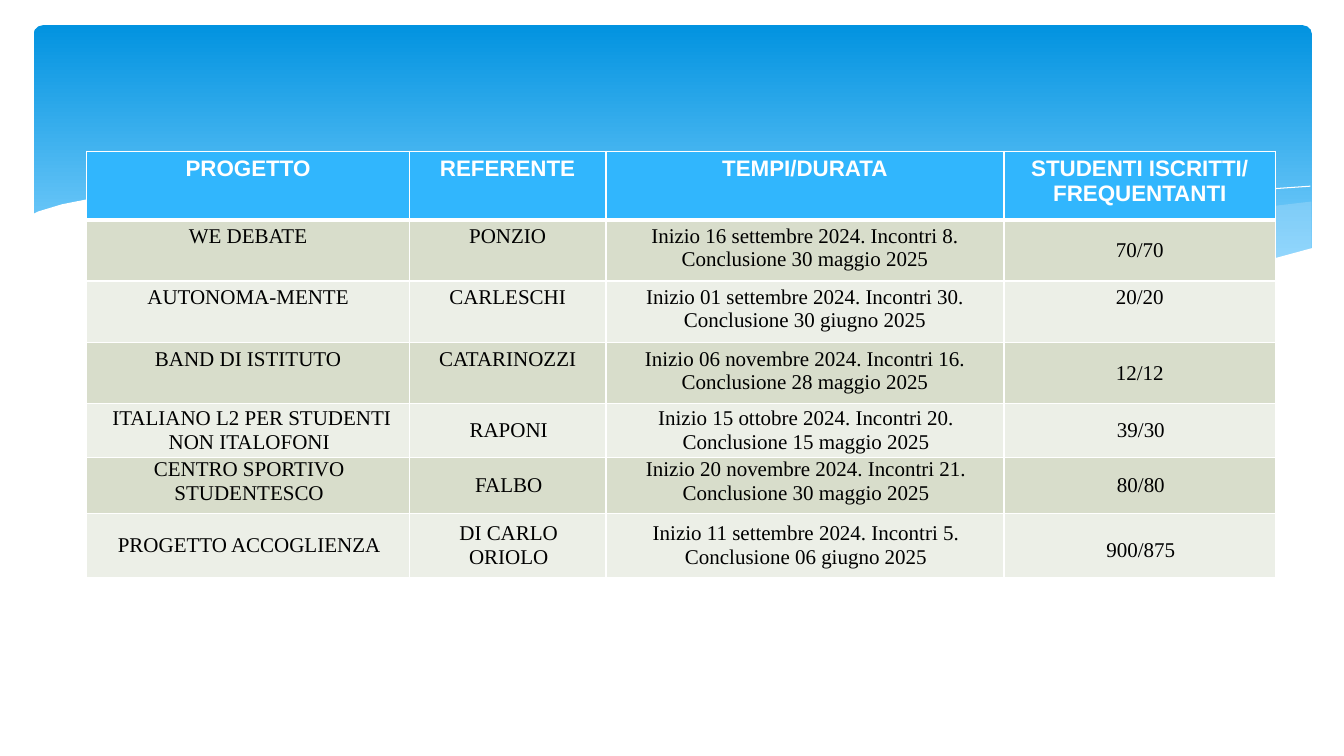
"""Build the slide that lists school projects, their leaders, dates and students."""
import pptx
import pptx.dml.color
import pptx.enum.shapes
import pptx.enum.text
import pptx.oxml
import pptx.oxml.ns
import pptx.util
from lxml import etree

Pt = pptx.util.Pt
RGBColor = pptx.dml.color.RGBColor
ANCHOR = pptx.enum.text.MSO_ANCHOR

WHITE = RGBColor(0xFF, 0xFF, 0xFF)
BLACK = RGBColor(0x00, 0x00, 0x00)
DEEP_BLUE = RGBColor(0x02, 0x93, 0xE0)
LIGHT_BLUE = RGBColor(0x83, 0xD3, 0xFE)
WAVE_BLUE = RGBColor(0xC6, 0xE7, 0xFC)
HEADER_BLUE = RGBColor(0x31, 0xB6, 0xFD)
BANDS = (RGBColor(0xD8, 0xDD, 0xCB), RGBColor(0xEC, 0xEF, 0xE7))

HEADER_FONT = {"name": "Arial", "size": Pt(16), "bold": True}
BODY_FONT = {"name": "Times New Roman", "size": Pt(15), "bold": False}

ROOMY = {"margin_left": Pt(7.2), "margin_right": Pt(7.2), "margin_top": Pt(3.6), "margin_bottom": Pt(3.6)}
TIGHT = {"margin_left": Pt(2.9), "margin_right": Pt(1.4), "margin_top": Pt(0.7), "margin_bottom": Pt(0.7)}
PLACEMENTS = {
    "t": {"vertical_anchor": ANCHOR.TOP},
    "m": {"vertical_anchor": ANCHOR.MIDDLE},
    "l": {"vertical_anchor": ANCHOR.TOP, "margin_top": Pt(18)},
}

RIGHT_WAVE = [
    (936.7, 144), (911, 147), (883.5, 151), (855.5, 155.5), (826, 160.5), (772.5, 170.5),
    (723.5, 178.5), (677.5, 185), (635, 191), (663, 193.5), (702.5, 197.5), (738, 199.5),
    (781, 200), (819.5, 198.5), (854, 196), (884, 191), (911.5, 185), (936.7, 178),
]
MIDDLE_WAVE = [
    (857, 196.5), (803.5, 191), (744.5, 183), (677.5, 173), (604, 160), (560, 152),
    (519, 146), (481.5, 141), (445.5, 137.5), (403, 134.5), (364.5, 133), (330.5, 134),
    (301, 135.5), (275, 137.5), (310.5, 141), (348, 146), (388, 152), (431.5, 160),
    (508.5, 173), (577.5, 183.5), (638.5, 191.5), (693.5, 197.5), (741.5, 199.5),
    (785, 200), (823, 199.5),
]
FALLING_LINE = [
    (296.5, 140.5), (322, 137.5), (359.5, 135.5), (415.5, 134.5), (469.5, 137), (534, 142),
    (610.5, 150), (698.5, 162.5), (763, 173.5), (834, 188), (871, 196),
]
RISING_LINE = [
    (589, 185), (626.5, 177), (692, 165), (745, 155.5), (803, 147), (859.5, 139.5),
    (900, 135.5), (936, 133),
]
WHITE_WAVE = [
    (938, 177), (903, 186.5), (873.5, 192), (840, 196.5), (803.5, 198.5), (762, 199),
    (714, 197.5), (661, 193), (600.5, 186), (533, 176.5), (456.5, 163.5), (402, 153.5),
    (350, 145.5), (303, 139.5), (260, 135.5), (220.5, 133), (169, 132.5), (126.5, 134),
    (91.5, 137.5), (64, 142), (44, 146), (27.5, 151), (22.5, 153.5), (22.5, 237), (938, 237),
]

COLUMN_WIDTHS = (230.4, 140.4, 284.4, 194)
PROJECTS = [
    (49, ROOMY, "tttt", ("PROGETTO", "REFERENTE", "TEMPI/DURATA", "STUDENTI ISCRITTI/\nFREQUENTANTI")),
    (43.7, ROOMY, "tttm", (
        "WE DEBATE", "PONZIO",
        "Inizio 16 settembre 2024. Incontri 8. Conclusione 30 maggio 2025", "70/70")),
    (44, ROOMY, "tttt", (
        "AUTONOMA-MENTE", "CARLESCHI",
        "Inizio 01 settembre 2024. Incontri 30. Conclusione 30 giugno 2025", "20/20")),
    (43.7, ROOMY, "tttm", (
        "BAND DI ISTITUTO", "CATARINOZZI",
        "Inizio 06 novembre 2024. Incontri 16. Conclusione 28 maggio 2025", "12/12")),
    (38.3, TIGHT, "mmmm", (
        " ITALIANO L2 PER STUDENTI NON ITALOFONI", "RAPONI",
        "Inizio 15 ottobre 2024. Incontri 20.\nConclusione 15 maggio 2025", "39/30")),
    (40.3, TIGHT, "tmtm", (
        "CENTRO SPORTIVO STUDENTESCO", "FALBO",
        "Inizio 20 novembre 2024. Incontri 21. Conclusione 30 maggio 2025", "80/80")),
    (45.3, TIGHT, "mmml", (
        "PROGETTO ACCOGLIENZA", "DI CARLO\nORIOLO",
        "Inizio 11 settembre 2024. Incontri 5.\nConclusione 06 giugno 2025", "900/875")),
]


def apply_format(target, values):
    """Set every attribute in values on target."""
    for attribute, value in values.items():
        setattr(target, attribute, value)


class SlideBuilder:
    """Hold the current slide and the style of its elements."""

    def __init__(self, slide):
        """Keep the slide to draw on."""
        self.shapes = slide.shapes

    def banner(self, left, top, width, height):
        """Draw the rounded panel with a vertical gradient."""
        panel = self.shapes.add_shape(
            pptx.enum.shapes.MSO_SHAPE.ROUNDED_RECTANGLE, Pt(left), Pt(top), Pt(width), Pt(height))
        panel.adjustments[0] = 0.034
        panel.shadow.inherit = False
        panel.line.fill.background()
        panel.fill.gradient()
        panel.fill.gradient_angle = 270
        for stop, position, color in zip(panel.fill.gradient_stops, (0, 0.9), (DEEP_BLUE, LIGHT_BLUE)):
            stop.position = position
            stop.color.rgb = color

    def outline(self, points, closed):
        """Draw a plain outline through the points."""
        corners = [(Pt(x), Pt(y)) for x, y in points]
        builder = self.shapes.build_freeform(*corners[0])
        builder.add_line_segments(corners[1:], close=closed)
        curve = builder.convert_to_shape()
        curve.shadow.inherit = False
        return curve

    def wave(self, points, color, opacity=100):
        """Draw a filled wave."""
        area = self.outline(points, True)
        area.line.fill.background()
        area.fill.solid()
        area.fill.fore_color.rgb = color
        if opacity < 100:
            tint = area.fill._xPr.find(".//" + pptx.oxml.ns.qn("a:srgbClr"))
            etree.SubElement(tint, pptx.oxml.ns.qn("a:alpha"), val=str(opacity * 1000))

    def ripple(self, points):
        """Draw a white hairline."""
        hairline = self.outline(points, False)
        hairline.fill.background()
        hairline.line.color.rgb = WHITE
        hairline.line.width = Pt(0)

    def borders(self, cell, widths):
        """Give a cell white borders on its four sides."""
        properties = cell._tc.get_or_add_tcPr()
        for side, width in widths.items():
            properties.append(pptx.oxml.parse_xml(
                f'<a:ln{side} {pptx.oxml.ns.nsdecls("a")} w="{Pt(width)}">'
                f'<a:solidFill><a:srgbClr val="{WHITE}"/></a:solidFill></a:ln{side}>'))

    def cell(self, cell, text, layout, font, color, fill, widths):
        """Fill and format one table cell."""
        self.borders(cell, widths)
        cell.fill.solid()
        cell.fill.fore_color.rgb = fill
        apply_format(cell, layout)
        cell.text = text
        for paragraph in cell.text_frame.paragraphs:
            paragraph.alignment = pptx.enum.text.PP_ALIGN.CENTER
            for run in paragraph.runs:
                apply_format(run.font, font)
                run.font.color.rgb = color

    def table(self, left, top, column_widths, rows):
        """Draw the table with a header and banded rows."""
        height = sum(row[0] for row in rows)
        grid = self.shapes.add_table(
            len(rows), len(column_widths), Pt(left), Pt(top), Pt(sum(column_widths)), Pt(height)).table
        grid.horz_banding = False
        for column, width in zip(grid.columns, column_widths):
            column.width = Pt(width)
        for index, (row_height, margins, placements, texts) in enumerate(rows):
            grid.rows[index].height = Pt(row_height)
            font, color, fill = (
                (BODY_FONT, BLACK, BANDS[(index - 1) % 2]) if index else (HEADER_FONT, WHITE, HEADER_BLUE))
            widths = {"L": 1, "R": 1, "T": 3 if index == 1 else 1, "B": 1 if index else 3}
            for column, (text, placement) in enumerate(zip(texts, placements)):
                layout = {**margins, **PLACEMENTS[placement]}
                self.cell(grid.cell(index, column), text, layout, font, color, fill, widths)


def main():
    """Create the presentation and save it."""
    presentation = pptx.Presentation()
    apply_format(presentation, {"slide_width": Pt(960), "slide_height": Pt(540)})
    builder = SlideBuilder(presentation.slides.add_slide(presentation.slide_layouts[6]))
    builder.banner(24, 18, 913, 194.4)
    builder.wave(RIGHT_WAVE, WAVE_BLUE, 29)
    builder.wave(MIDDLE_WAVE, WAVE_BLUE, 40)
    builder.ripple(FALLING_LINE)
    builder.ripple(RISING_LINE)
    builder.wave(WHITE_WAVE, WHITE)
    builder.table(62, 108, COLUMN_WIDTHS, PROJECTS)
    presentation.save("out.pptx")


if __name__ == "__main__":
    main()
